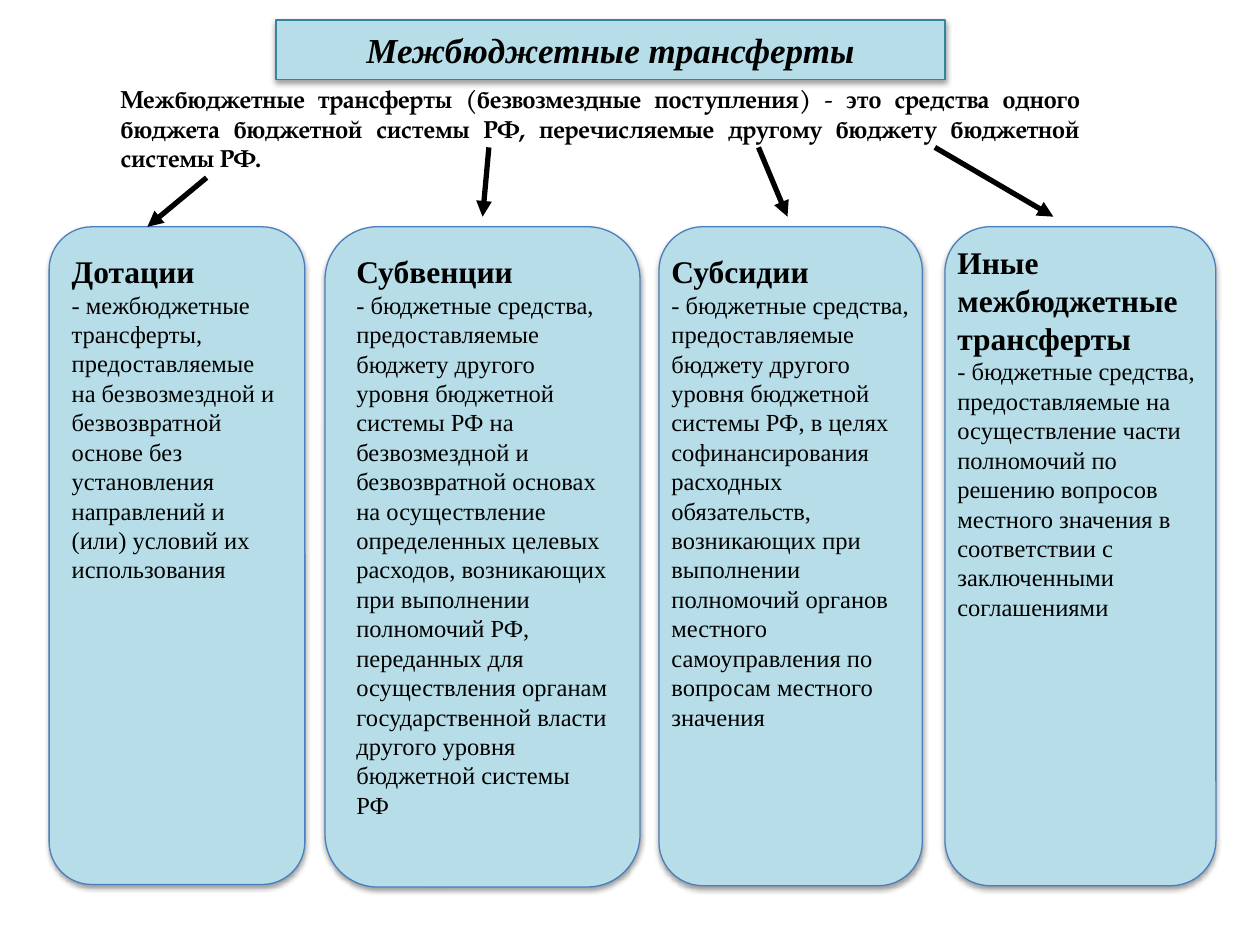
from dataclasses import dataclass

from lxml.etree import SubElement
from pptx import Presentation
from pptx.dml.color import RGBColor
from pptx.enum.shapes import MSO_CONNECTOR, MSO_SHAPE
from pptx.enum.text import MSO_ANCHOR, MSO_AUTO_SIZE, PP_ALIGN
from pptx.oxml.ns import qn
from pptx.util import Inches, Pt

WIDE, HIGH = Inches(10), Inches(7.5)
SERIF, BOOK = "Times New Roman", "TeX Gyre Pagella"
BLACK, PALE, BLUE, TEAL = "000000", "B7DEE8", "4B7EBC", "31859C"
TOP = 24


@dataclass(frozen=True)
class Box:
    left: float
    top: float
    width: float
    height: float

    def spot(self) -> tuple[int, int, int, int]:
        return (across(self.left), down(self.top),
                across(self.width), down(self.height))


@dataclass(frozen=True)
class Run:
    text: str
    size: float = 14
    bold: bool = False
    slant: bool = False
    font: str = SERIF


@dataclass(frozen=True)
class Card:
    left: float
    width: float
    height: float
    note: Box
    head: str
    body: str


@dataclass(frozen=True)
class Arrow:
    x1: float
    y1: float
    x2: float
    y2: float


CARDS = [
    Card(3.9, 20.3, 69.6, Box(4.7, 26, 18.8, 36.8), "Дотации",
         "- межбюджетные трансферты, предоставляемые на безвозмездной и "
         "безвозвратной основе без установления направлений и (или) условий "
         "их использования"),
    Card(25.8, 25, 69.87, Box(27.3, 26, 22, 58.8), "Субвенции",
         "- бюджетные средства, предоставляемые бюджету другого уровня "
         "бюджетной системы РФ на безвозмездной и безвозвратной основах на "
         "осуществление определенных целевых расходов, возникающих при "
         "выполнении полномочий РФ, переданных для осуществления органам "
         "государственной власти другого уровня бюджетной системы РФ"),
    Card(52.3, 20.9, 69.73, Box(52.3, 26, 21.1, 52.53), "Субсидии",
         "- бюджетные средства, предоставляемые бюджету другого уровня "
         "бюджетной системы РФ, в целях софинансирования расходных "
         "обязательств, возникающих при выполнении полномочий органов "
         "местного самоуправления по вопросам местного значения"),
    Card(75, 21.5, 69.73, Box(75, 25.07, 21.6, 41.73),
         "Иные межбюджетные трансферты",
         "- бюджетные средства, предоставляемые на осуществление части "
         "полномочий по решению вопросов местного значения в соответствии с "
         "заключенными соглашениями"),
]

ARROWS = [
    Arrow(16.4, 18.8, 11.7, TOP),
    Arrow(38.8, 15.6, 38.3, 22.93),
    Arrow(60.2, 15.6, 62.5, 22.93),
    Arrow(74.2, 15.6, 83.6, 22.93),
]

INTRO = [
    Run("Межбюджетные трансферты (безвозмездные поступления)", bold=True, font=BOOK),
    Run(" -", font=BOOK),
    Run(" это средства одного бюджета бюджетной системы РФ, перечисляемые "
        "другому бюджету бюджетной системы РФ.", bold=True, font=BOOK),
]


def across(share: float) -> int:
    return round(WIDE * share / 100)


def down(share: float) -> int:
    return round(HIGH * share / 100)


def color(code: str) -> RGBColor:
    return RGBColor.from_string(code)


def shade(shape) -> None:
    shape.shadow.inherit = False
    glow = shape._element.spPr.find(qn("a:effectLst"))
    outer = SubElement(glow, qn("a:outerShdw"), blurRad=str(Pt(3.1)),
                       dist=str(Pt(1.6)), dir="5400000", rotWithShape="0")
    tint = SubElement(outer, qn("a:srgbClr"), val=BLACK)
    SubElement(tint, qn("a:alpha"), val="38000")


def panel(slide, kind: MSO_SHAPE, box: Box, edge: str):
    shape = slide.shapes.add_shape(kind, *box.spot())
    shape.fill.solid()
    shape.fill.fore_color.rgb = color(PALE)
    shape.line.color.rgb = color(edge)
    shape.line.width = Pt(0.75)
    shade(shape)
    return shape


def write(frame, lines: list[list[Run]], align: PP_ALIGN) -> None:
    for index, line in enumerate(lines):
        para = frame.add_paragraph() if index else frame.paragraphs[0]
        para.alignment = align
        for item in line:
            run = para.add_run()
            run.text = item.text
            font = run.font
            font.name, font.size = item.font, Pt(item.size)
            font.bold, font.italic = item.bold, item.slant
            font.color.rgb = color(BLACK)


def label(slide, box: Box, lines: list[list[Run]], align: PP_ALIGN) -> None:
    frame = slide.shapes.add_textbox(*box.spot()).text_frame
    frame.word_wrap = True
    frame.auto_size = MSO_AUTO_SIZE.SHAPE_TO_FIT_TEXT
    write(frame, lines, align)


def point(slide, arrow: Arrow) -> None:
    line = slide.shapes.add_connector(
        MSO_CONNECTOR.STRAIGHT, across(arrow.x1), down(arrow.y1),
        across(arrow.x2), down(arrow.y2))
    line.line.color.rgb = color(BLACK)
    line.line.width = Pt(3)
    SubElement(line.line._get_or_add_ln(), qn("a:tailEnd"), type="triangle")
    SubElement(line._element.spPr, qn("a:effectLst"))


def main() -> None:
    deck = Presentation()
    deck.slide_width, deck.slide_height = WIDE, HIGH
    slide = deck.slides.add_slide(deck.slide_layouts[6])

    title = panel(slide, MSO_SHAPE.RECTANGLE, Box(21.9, 2.13, 53.1, 6.27), TEAL)
    frame = title.text_frame
    frame.word_wrap = False
    frame.vertical_anchor = MSO_ANCHOR.MIDDLE
    write(frame, [[Run("Межбюджетные трансферты", 20, True, True)]], PP_ALIGN.CENTER)

    for card in CARDS:
        panel(slide, MSO_SHAPE.FLOWCHART_ALTERNATE_PROCESS,
              Box(card.left, TOP, card.width, card.height), BLUE)
    for arrow in ARROWS:
        point(slide, arrow)
    for card in CARDS:
        label(slide, card.note, [[Run(card.head, 18, True)], [Run(card.body)]],
              PP_ALIGN.LEFT)
    label(slide, Box(8.6, 8.27, 78.1, 10.8), [INTRO], PP_ALIGN.JUSTIFY)

    deck.save("out.pptx")


if __name__ == "__main__":
    main()
